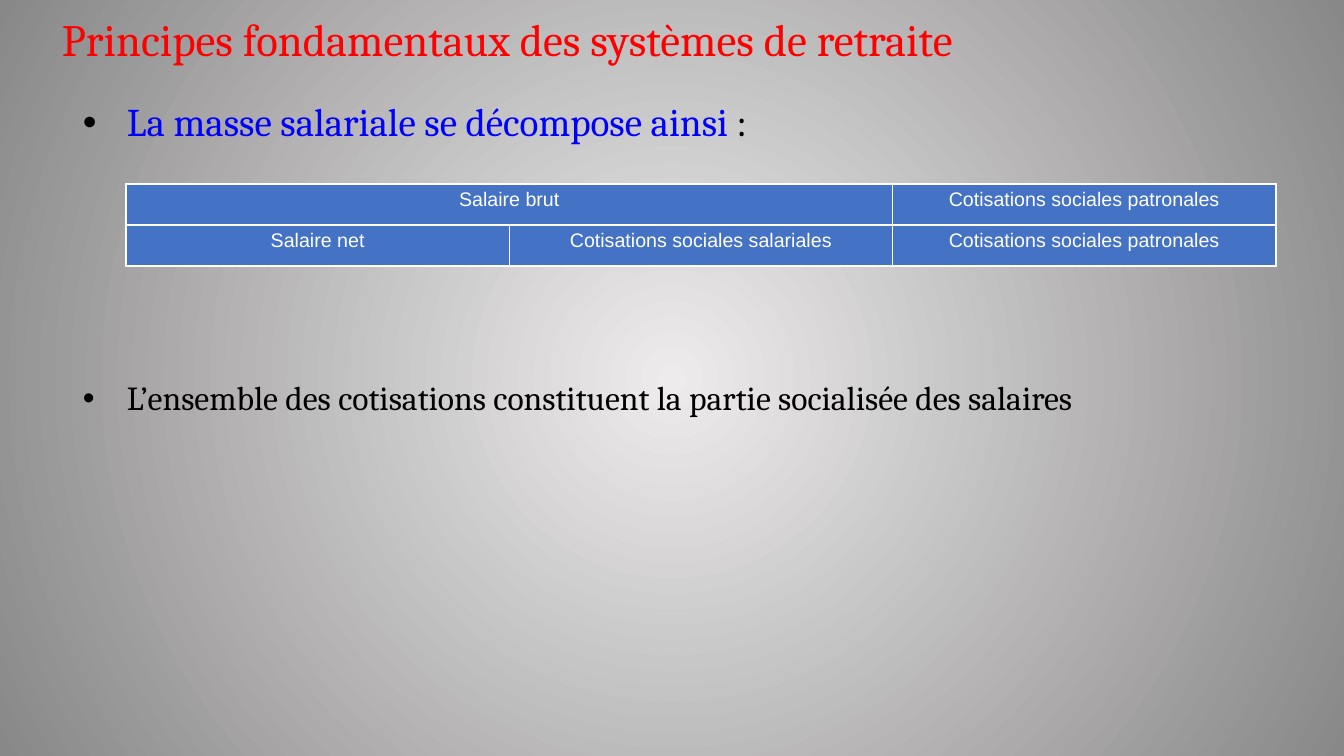
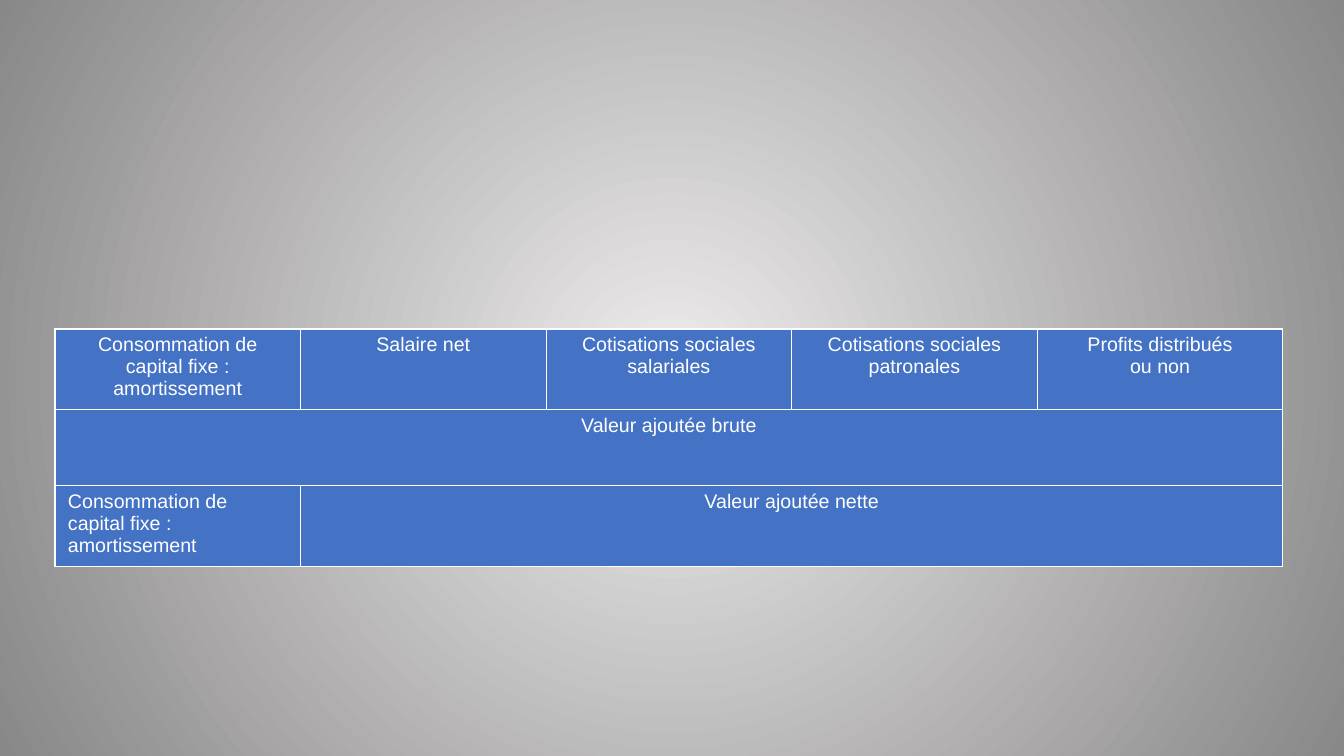
from lxml import etree
from pptx import Presentation
from pptx import util as u
from pptx.dml.color import RGBColor
from pptx.enum import text
from pptx.oxml import parse_xml
from pptx.oxml.ns import nsdecls, qn

HUES = {"light": "EDEBEB", "dark": "898888", "red": "FF0000", "blue": "0000FF",
        "black": "000000", "white": "FFFFFF", "cell": "4472C4"}
SCALE = 914400 / 100.8
LEFT, MID = text.PP_ALIGN.LEFT, text.PP_ALIGN.CENTER


def px(n):
    return u.Emu(round(n * SCALE))


def write(frame, runs, size, font="Cambria", align=LEFT, gap=0, line=0.9, dot=False, more=False):
    para = frame.add_paragraph() if more else frame.paragraphs[0]
    para.alignment, para.line_spacing, para.space_before = align, line, u.Pt(gap)
    if dot:
        props = para._p.get_or_add_pPr()
        props.set("marL", str(px(50)))
        props.set("indent", str(-px(44)))
        props.append(parse_xml(f'<a:buClr {nsdecls("a")}><a:srgbClr val="{HUES["black"]}"/></a:buClr>'))
        props.append(parse_xml(f'<a:buFont {nsdecls("a")} typeface="Arial"/>'))
        props.append(parse_xml(f'<a:buChar {nsdecls("a")} char="•"/>'))
    for words, hue in runs:
        run = para.add_run()
        run.text = words
        run.font.size, run.font.name, run.font.bold = u.Pt(size), font, False
        run.font.color.rgb = RGBColor.from_string(HUES[hue])


deck = Presentation()
deck.slide_width, deck.slide_height = px(1344), px(756)

fill = deck.slide_master.background.fill
fill.gradient()
for stop, hue, place in zip(fill.gradient_stops, ("light", "dark"), (0, 1)):
    stop.color.rgb = RGBColor.from_string(HUES[hue])
    stop.position = place
grad = deck.slide_master.element.find(".//" + qn("a:gradFill"))
grad.replace(grad.find(qn("a:lin")), parse_xml(
    f'<a:path {nsdecls("a")} path="circle">'
    '<a:fillToRect l="50000" t="50000" r="50000" b="50000"/></a:path>'))

blank = deck.slide_layouts[6]
first, second = [deck.slides.add_slide(blank) for _ in range(2)]

title = first.shapes.add_textbox(px(52), px(7), px(1246), px(69)).text_frame
body = first.shapes.add_textbox(px(67), px(93), px(1210), px(663)).text_frame
for frame in (title, body):
    frame.word_wrap = True
    frame.margin_left = frame.margin_right = frame.margin_top = frame.margin_bottom = px(10)
title.vertical_anchor = text.MSO_ANCHOR.MIDDLE
write(title, [("Principes fondamentaux des systèmes de retraite", "red")], 32)
write(body, [("La masse salariale se décompose ainsi ", "blue"), (":", "black")], 28, dot=True)
write(body, [("L’ensemble des cotisations constituent la partie socialisée des salaires", "black")],
      24, align=text.PP_ALIGN.JUSTIFY, gap=169, dot=True, more=True)

NET, STAFF, BOSS = "Salaire net", "Cotisations sociales salariales", "Cotisations sociales patronales"
WEAR = "Consommation de capital fixe : amortissement"
TABLES = [
    (first, 126, 184, 1150, 41, 3, [
        [("Salaire brut", 2, MID), (BOSS, 1, MID)],
        [(NET, 1, MID), (STAFF, 1, MID), (BOSS, 1, MID)]]),
    (second, 55, 329, 1228, 76, 5, [
        [(WEAR, 1, MID), (NET, 1, MID), (STAFF, 1, MID), (BOSS, 1, MID),
         ("Profits distribués\nou non", 1, MID)],
        [("Valeur ajoutée brute", 5, MID)],
        [(WEAR, 1, LEFT), ("Valeur ajoutée nette", 4, MID)]]),
]

for slide, left, top, width, high, count, rows in TABLES:
    table = slide.shapes.add_table(len(rows), count, px(left), px(top),
                                   px(width), px(high * len(rows))).table
    table.first_row = table.horz_banding = False
    for cell in table.iter_cells():
        props = cell._tc.get_or_add_tcPr()
        for side in ("lnL", "lnR", "lnT", "lnB"):
            edge = etree.SubElement(props, qn("a:" + side), w=str(u.Pt(1)))
            paint = etree.SubElement(edge, qn("a:solidFill"))
            etree.SubElement(paint, qn("a:srgbClr"), val=HUES["white"])
        cell.fill.solid()
        cell.fill.fore_color.rgb = RGBColor.from_string(HUES["cell"])
        cell.margin_left = cell.margin_right = px(13)
        cell.margin_top = cell.margin_bottom = px(5)
    for r, row in enumerate(rows):
        col = 0
        for words, span, align in row:
            cell = table.cell(r, col)
            if span > 1:
                cell.merge(table.cell(r, col + span - 1))
            for i, part in enumerate(words.split("\n")):
                write(cell.text_frame, [(part, "white")], 14, font="Arial",
                      align=align, line=1.0, more=i > 0)
            col += span

deck.save("out.pptx")
